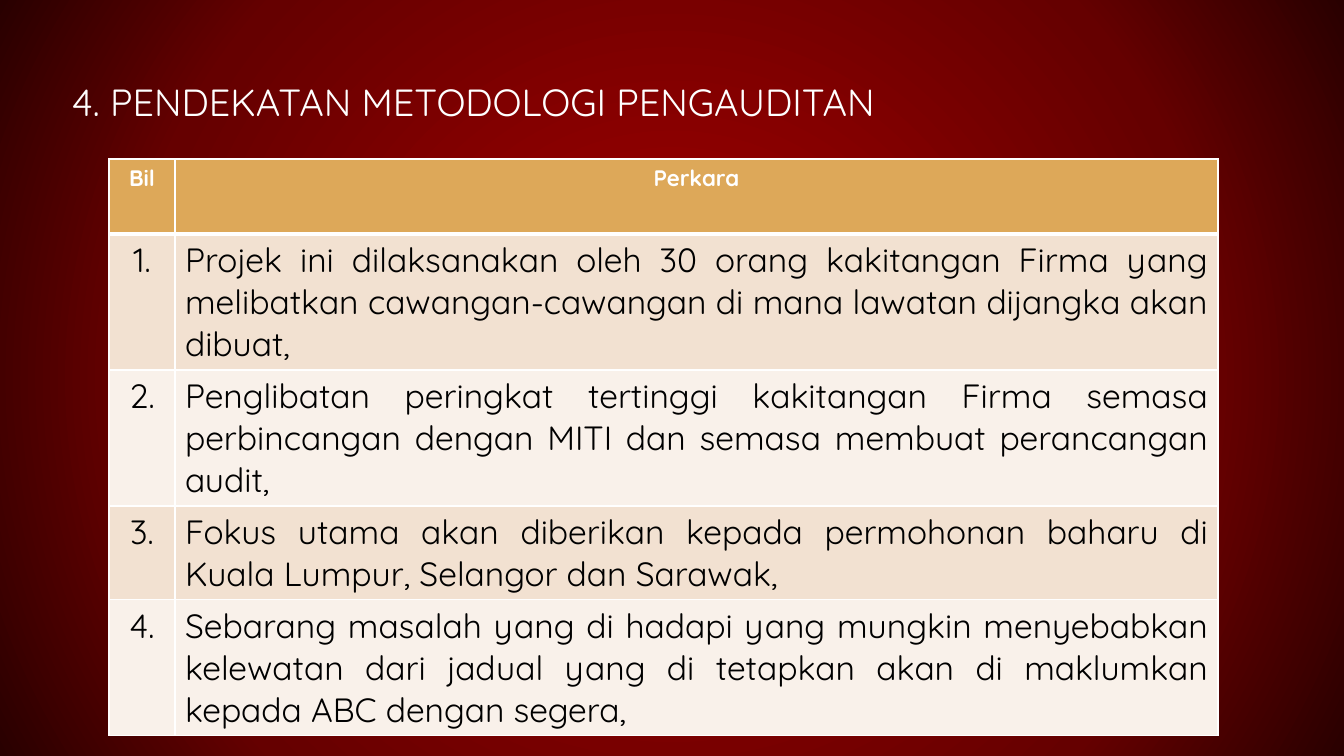
"""Build the audit methodology slide with its numbered table."""
from lxml.etree import SubElement as Sub
from pptx import Presentation
from pptx.dml.color import RGBColor as RGB
from pptx.enum.text import PP_ALIGN as Align
from pptx.oxml.ns import qn
from pptx.util import Pt

TITLE = "4. PENDEKATAN METODOLOGI PENGAUDITAN"
HEAD = ("Bil", "Perkara")
ITEMS = [
    "Projek ini dilaksanakan oleh 30 orang kakitangan Firma yang melibatkan "
    "cawangan-cawangan di mana lawatan dijangka akan dibuat,",
    "Penglibatan peringkat tertinggi kakitangan Firma semasa perbincangan "
    "dengan MITI dan semasa membuat perancangan audit,",
    "Fokus utama akan diberikan kepada permohonan baharu di Kuala Lumpur, "
    "Selangor dan Sarawak,",
    "Sebarang masalah yang di hadapi yang mungkin menyebabkan kelewatan dari "
    "jadual yang di tetapkan akan di maklumkan kepada ABC dengan segera,",
]
ROWS = [HEAD] + [(f"{n}.", item) for n, item in enumerate(ITEMS, 1)]
COLS = (66, 1043)
HIGHS = (75, 136, 136, 94, 136)

FONT = "Quicksand"
WHITE = RGB(255, 255, 255)
BLACK = RGB(0, 0, 0)
GOLD = RGB(0xDD, 0xA8, 0x59)
BANDS = (RGB(0xF2, 0xE1, 0xD1), RGB(0xF9, 0xF1, 0xEA))
GLOW = [(17, RGB(0x96, 0, 0)), (71, RGB(0x65, 0, 0)), (100, RGB(0x29, 0, 0))]


def px(n):
    return round(n * 914400 / 100.8)


def style(para, size, color, bold=False, align=Align.LEFT):
    para.alignment = align
    font = para.font
    font.name, font.size, font.bold = FONT, Pt(size), bold
    font.color.rgb = color


def glow(slide):
    slide.background.fill.gradient()
    grad = next(slide.element.iter(qn("a:gradFill")))
    for part in list(grad):
        grad.remove(part)
    stops = Sub(grad, qn("a:gsLst"))
    for pos, color in GLOW:
        stop = Sub(stops, qn("a:gs"), pos=str(pos * 1000))
        Sub(stop, qn("a:srgbClr"), val=str(color))
    ring = Sub(grad, qn("a:path"), path="circle")
    Sub(ring, qn("a:fillToRect"), dict.fromkeys("ltrb", "50000"))


def edge(cell, base):
    props = cell._tc.get_or_add_tcPr()
    for spot, side in enumerate("LRTB"):
        width = base if side == "B" else 1
        line = Sub(props, qn(f"a:ln{side}"), w=str(Pt(width)))
        fill = Sub(line, qn("a:solidFill"))
        Sub(fill, qn("a:srgbClr"), val=str(WHITE))
        props.insert(spot, line)


def add_title(slide):
    box = slide.shapes.add_textbox(px(59), px(77), px(1183), px(84))
    frame = box.text_frame
    frame.word_wrap = True
    frame.margin_left = frame.margin_right = px(13)
    frame.margin_top = frame.margin_bottom = px(7)
    para = frame.paragraphs[0]
    para.text = TITLE
    para.line_spacing, para.space_before = 0.9, Pt(16)
    style(para, 27, WHITE)


def add_grid(slide):
    grid = slide.shapes.add_table(
        len(ROWS), len(COLS), px(109), px(159), px(sum(COLS)), px(sum(HIGHS))
    ).table
    for col, width in zip(grid.columns, COLS):
        col.width = px(width)
    for r, (row, high) in enumerate(zip(ROWS, HIGHS)):
        grid.rows[r].height = px(high)
        for c, text in enumerate(row):
            cell = grid.cell(r, c)
            cell.text = text
            cell.fill.solid()
            para = cell.text_frame.paragraphs[0]
            if r == 0:
                cell.fill.fore_color.rgb = GOLD
                style(para, 16, WHITE, True, Align.CENTER)
            else:
                cell.fill.fore_color.rgb = BANDS[(r - 1) % 2]
                style(para, 24, BLACK, False, Align.JUSTIFY if c else Align.CENTER)
            edge(cell, 1 if r else 3)


def main():
    deck = Presentation()
    deck.slide_width, deck.slide_height = px(1344), px(756)
    slide = deck.slides.add_slide(deck.slide_layouts[6])
    glow(slide)
    add_title(slide)
    add_grid(slide)
    deck.save("out.pptx")


if __name__ == "__main__":
    main()
